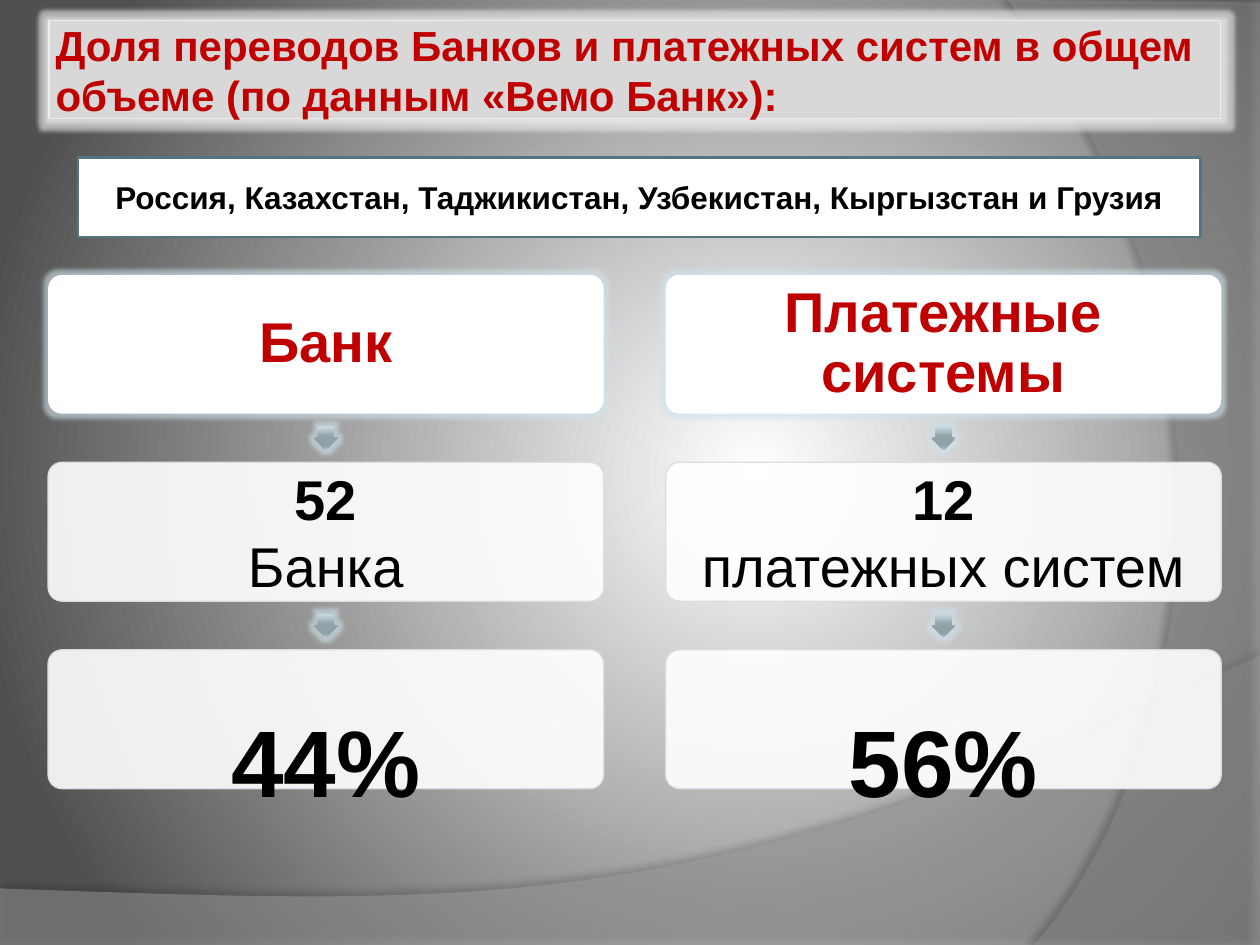
from dataclasses import dataclass

from lxml import etree
from pptx import Presentation
from pptx.dml.color import RGBColor
from pptx.enum.shapes import MSO_SHAPE
from pptx.enum.text import MSO_ANCHOR, PP_ALIGN
from pptx.oxml import parse_xml
from pptx.oxml.ns import nsdecls, qn
from pptx.util import Cm, Pt

RECTANGLE, ROUNDED, DOWN_ARROW = (
    MSO_SHAPE.RECTANGLE, MSO_SHAPE.ROUNDED_RECTANGLE, MSO_SHAPE.DOWN_ARROW)
LEFT, CENTER = PP_ALIGN.LEFT, PP_ALIGN.CENTER
TOP, MIDDLE = MSO_ANCHOR.TOP, MSO_ANCHOR.MIDDLE
FONT, RED, BLACK, WHITE = "Arial", "C00000", "000000", "FFFFFF"
ARROW_STOPS = [(0, "CCDEE5"), (25, "ACBCC3"), (38, "95A6AC"), (55, "90A1A8"),
               (80, "8CA1A9"), (88, "92AAB4"), (100, "B4D0DC")]
RADIAL = ('<a:path path="circle">'
          '<a:fillToRect l="60000" t="50000" r="40000" b="50000"/></a:path>')
LINEAR = '<a:lin ang="5400000" scaled="0"/>'
ROW_TOP, ROW_PITCH = 5.54, 3.78
CARD_WIDTH, CARD_HEIGHT, ARROW_SIZE = 11.2, 2.8, 0.48


@dataclass
class Line:
    text: str
    size: float
    color: str = BLACK
    bold: bool = True
    spacing: float = 1.0


@dataclass
class Box:
    left: float
    top: float
    width: float
    height: float


@dataclass
class Column:
    left: float
    heading: str
    count: str
    unit: str
    share: str


@dataclass
class Wave:
    corners: list
    curve: list
    color: str
    opacity: int
    shadow_opacity: int
    shadow_distance: float
    shadow_angle: int


COLUMNS = [Column(0.97, "Банк", "52", "Банка", "44%"),
           Column(13.42, "Платежные системы", "12", "платежных систем", "56%")]
WAVES = [
    Wave([(0, 17.91), (0, 19.05), (25.4, 19.05), (25.4, 13.21)],
         [(14.2, 18.52), (9.93, 18.26), (0, 17.91)], "A4A4A4", 45, 35, 3.5, 270),
    Wave([(25.4, 0.05), (25.4, 19.05), (20.85, 19.05)],
         [(23.75, 15.72), (25.86, 7.62), (20.32, 0)], "939393", 40, 45, 4, 180),
]


def rgb(value: str) -> RGBColor:
    return RGBColor.from_string(value)


def set_alpha(color_parent, opacity: int):
    color = color_parent.find(".//" + qn("a:srgbClr"))
    etree.SubElement(color, qn("a:alpha")).set("val", str(opacity * 1000))


def gradient(stops: list, direction: str):
    marks = "".join(f'<a:gs pos="{position * 1000}"><a:srgbClr val="{color}"/></a:gs>'
                    for position, color in stops)
    return parse_xml(f'<a:gradFill {nsdecls("a")} rotWithShape="1">'
                     f'<a:gsLst>{marks}</a:gsLst>{direction}</a:gradFill>')


def add_effect(shape, kind: str, color: str, opacity: int, **settings):
    effects = shape._element.spPr.find(qn("a:effectLst"))
    effect = etree.SubElement(effects, qn(f"a:{kind}"))
    for key, value in settings.items():
        effect.set(key, str(value))
    etree.SubElement(effect, qn("a:srgbClr")).set("val", color)
    set_alpha(effect, opacity)


def paint(shape, fill: str, line: str = "", weight: float = 0.75, opacity: int = 100):
    shape.shadow.inherit = False
    shape.fill.solid()
    shape.fill.fore_color.rgb = rgb(fill)
    if opacity < 100:
        set_alpha(shape._element.spPr.find(qn("a:solidFill")), opacity)
    if line:
        shape.line.color.rgb = rgb(line)
        shape.line.width = Pt(weight)
    else:
        shape.line.fill.background()


def add_shape(slide, kind, box: Box):
    return slide.shapes.add_shape(
        kind, Cm(box.left), Cm(box.top), Cm(box.width), Cm(box.height))


def write(shape, lines: list, align=CENTER, anchor=MIDDLE, side=0.18, top=0.1):
    frame = shape.text_frame
    frame.word_wrap = True
    frame.vertical_anchor = anchor
    frame.margin_left = frame.margin_right = Cm(side)
    frame.margin_top, frame.margin_bottom = Cm(top), Cm(0.1)
    for index, line in enumerate(lines):
        paragraph = frame.add_paragraph() if index else frame.paragraphs[0]
        paragraph.alignment = align
        paragraph.line_spacing = line.spacing
        run = paragraph.add_run()
        run.text = line.text
        run.font.name, run.font.size, run.font.bold = FONT, Pt(line.size), line.bold
        run.font.color.rgb = rgb(line.color)


def bezier(points: list, steps: int = 40) -> list:
    a, b, c, d = points
    return [tuple((1 - t) ** 3 * a[k] + 3 * (1 - t) ** 2 * t * b[k]
                  + 3 * (1 - t) * t ** 2 * c[k] + t ** 3 * d[k] for k in (0, 1))
            for t in (step / steps for step in range(1, steps + 1))]


def add_wave(slide, wave: Wave):
    outline = wave.corners + bezier(wave.corners[-1:] + wave.curve)
    start, *rest = [(Cm(x), Cm(y)) for x, y in outline]
    builder = slide.shapes.build_freeform(*start)
    builder.add_line_segments(rest, close=True)
    shape = builder.convert_to_shape()
    paint(shape, wave.color, opacity=wave.opacity)
    add_effect(shape, "outerShdw", BLACK, wave.shadow_opacity, blurRad=Pt(4),
               dist=Pt(wave.shadow_distance), dir=wave.shadow_angle * 60000)


def add_card(slide, column: Column, row: int):
    card = add_shape(slide, ROUNDED, Box(
        column.left, ROW_TOP + row * ROW_PITCH, CARD_WIDTH, CARD_HEIGHT))
    card.adjustments[0] = 0.1
    if row == 0:
        paint(card, WHITE)
        add_effect(card, "glow", "D0E2EA", 60, rad=Pt(5))
        write(card, [Line(column.heading, 32, RED, spacing=0.9)])
        return
    paint(card, WHITE, "D5DFE4", opacity=90)
    if row == 1:
        write(card, [Line(column.count, 32), Line(column.unit, 32, bold=False)])
    else:
        write(card, [Line(column.share, 54)], anchor=TOP, top=1)


def add_arrow(slide, column: Column, row: int):
    gap = ROW_PITCH - CARD_HEIGHT
    arrow = add_shape(slide, DOWN_ARROW, Box(
        column.left + (CARD_WIDTH - ARROW_SIZE) / 2,
        ROW_TOP + row * ROW_PITCH - (gap + ARROW_SIZE) / 2, ARROW_SIZE, ARROW_SIZE))
    arrow.adjustments[0], arrow.adjustments[1] = 0.67, 0.5
    paint(arrow, ARROW_STOPS[0][1])
    properties = arrow._element.spPr
    properties.replace(properties.find(qn("a:solidFill")), gradient(ARROW_STOPS, LINEAR))
    add_effect(arrow, "glow", "D0E2EA", 60, rad=Pt(5))


def main():
    """Build the slide on the shares of banks and payment systems."""
    deck = Presentation()
    deck.slide_width, deck.slide_height = Cm(25.4), Cm(19.05)
    slide = deck.slides.add_slide(deck.slide_layouts[6])
    slide.background.fill.solid()
    backdrop = slide._element.cSld.find(".//" + qn("p:bgPr"))
    backdrop.replace(backdrop.find(qn("a:solidFill")),
                     gradient([(0, WHITE), (100, "505050")], RADIAL))
    for wave in WAVES:
        add_wave(slide, wave)

    title = add_shape(slide, RECTANGLE, Box(0.99, 0.41, 23.62, 1.98))
    paint(title, "D8D8D8", "EDEDED")
    add_effect(title, "glow", "EDEDED", 60, rad=Pt(5))
    write(title, [Line("Доля переводов Банков и платежных систем в общем объеме "
                       "(по данным «Вемо Банк»):", 24, RED)], LEFT, side=0.13)

    for column in COLUMNS:
        for row in range(3):
            if row:
                add_arrow(slide, column, row)
            add_card(slide, column, row)

    countries = add_shape(slide, RECTANGLE, Box(1.57, 3.18, 22.63, 1.6))
    paint(countries, WHITE, "517682", 1.5)
    write(countries, [Line("Россия, Казахстан, Таджикистан, Узбекистан, "
                           "Кыргызстан и Грузия", 18)])
    deck.save("out.pptx")


if __name__ == "__main__":
    main()
